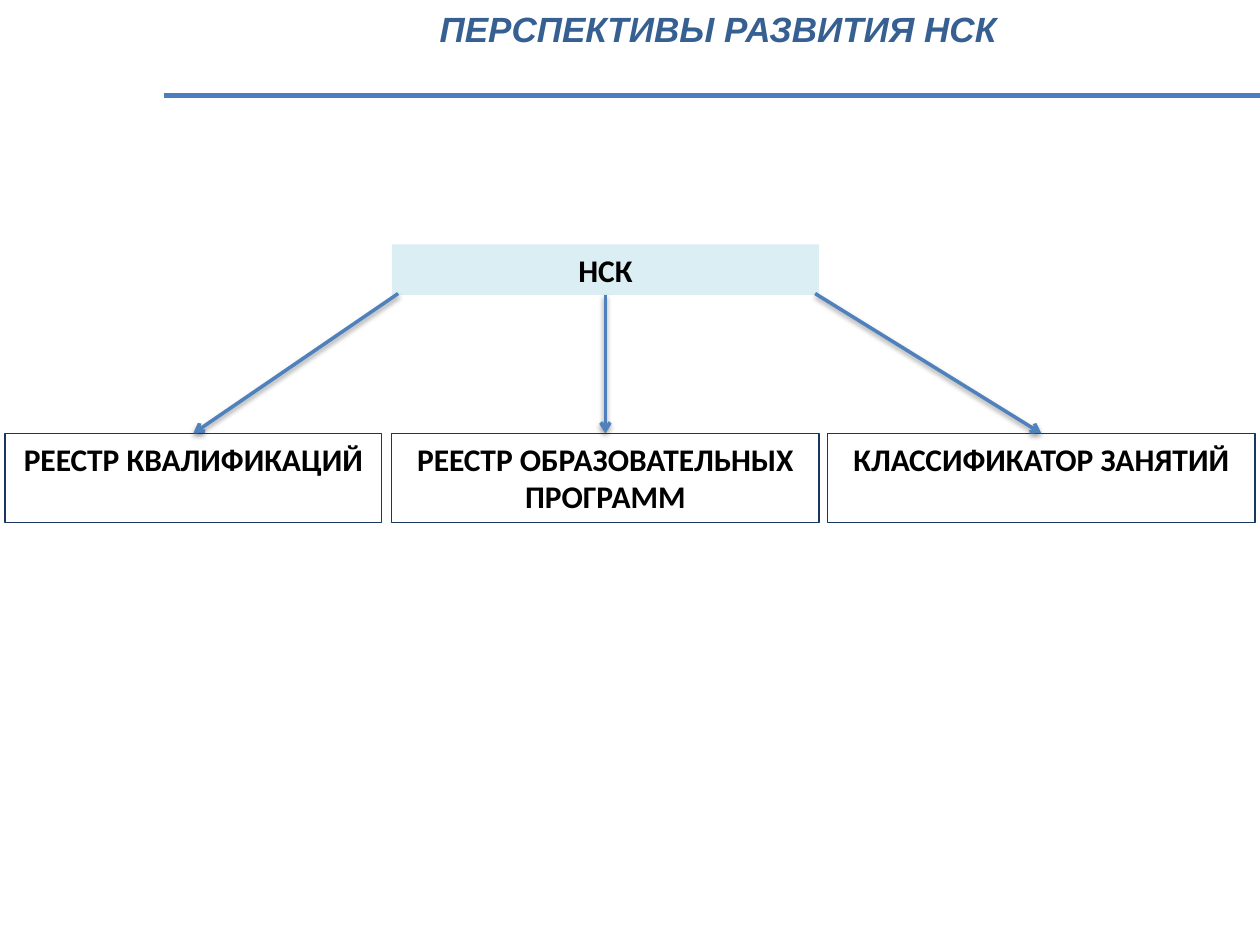
"""Build a slide showing the three parts of the НСК."""
from lxml import etree
from pptx import Presentation
from pptx.dml.color import RGBColor
from pptx.enum.shapes import MSO_CONNECTOR, MSO_SHAPE
from pptx.enum.text import MSO_ANCHOR, MSO_AUTO_SIZE, PP_ALIGN
from pptx.oxml.ns import qn
from pptx.util import Inches, Pt

STRAIGHT = MSO_CONNECTOR.STRAIGHT
RECTANGLE = MSO_SHAPE.RECTANGLE
TOP = MSO_ANCHOR.TOP
CENTER = PP_ALIGN.CENTER
NO_FIT = MSO_AUTO_SIZE.NONE

TITLE_BLUE = RGBColor(0x37, 0x60, 0x92)
RULE_BLUE = RGBColor(0x4B, 0x7E, 0xBC)
ARROW_BLUE = RGBColor(0x4F, 0x81, 0xBD)
BORDER_NAVY = RGBColor(0x17, 0x37, 0x5E)
PALE_BLUE = RGBColor(0xDB, 0xEE, 0xF4)
BLACK = RGBColor(0, 0, 0)

SITE_BOTTOM, SITE_TOP = 2, 0
BOX_TOP, BOX_HEIGHT = 3.44, 0.71
COMPONENTS = [
    ("РЕЕСТР КВАЛИФИКАЦИЙ", 0.04, 2.99),
    ("РЕЕСТР ОБРАЗОВАТЕЛЬНЫХ ПРОГРАММ", 3.11, 3.39),
    ("КЛАССИФИКАТОР ЗАНЯТИЙ", 6.57, 3.39),
]
ARROW_STARTS = [3.16, 4.8, 6.47]
ARROW_TOP = 2.33


def write_text(shape, text, font="Calibri", size=18, color=BLACK, italic=False):
    """Put one bold centred paragraph at the top of a shape."""
    frame = shape.text_frame
    frame.word_wrap = True
    frame.auto_size = NO_FIT
    frame.vertical_anchor = TOP
    para = frame.paragraphs[0]
    para.alignment = CENTER
    span = para.add_run()
    span.text = text
    span.font.name = font
    span.font.size = Pt(size)
    span.font.bold = True
    span.font.italic = italic
    span.font.color.rgb = color


def add_title(page, text):
    """Move the title placeholder to the top and fill it."""
    title = page.shapes.title
    title.left, title.top = Inches(1.14), Inches(0.01)
    title.width, title.height = Inches(8.62), Inches(0.44)
    title.text_frame.margin_left = Inches(0.6)
    write_text(title, text, font="Arial", size=20, color=TITLE_BLUE, italic=True)


def add_box(page, text, left, top, width, height, fill=None, border=None):
    """Add a labelled rectangle with an optional fill and border."""
    box = page.shapes.add_shape(
        RECTANGLE, Inches(left), Inches(top), Inches(width), Inches(height))
    box.shadow.inherit = False
    if fill is None:
        box.fill.background()
    else:
        box.fill.solid()
        box.fill.fore_color.rgb = fill
    if border is None:
        box.line.fill.background()
    else:
        box.line.color.rgb = border
        box.line.width = Pt(0.75)
    write_text(box, text)
    return box


def add_line(page, start, end, color, weight):
    """Add a straight connector and return it with its empty effect list."""
    line = page.shapes.add_connector(STRAIGHT, *map(Inches, start + end))
    line.line.color.rgb = color
    line.line.width = Pt(weight)
    effects = etree.SubElement(line._element.spPr, qn("a:effectLst"))
    return line, effects


def add_arrow(page, start, target):
    """Add a shadowed arrow from a point to the top of a box."""
    arrow, effects = add_line(page, start, start, ARROW_BLUE, 2)
    arrow.end_connect(target, SITE_TOP)
    etree.SubElement(arrow.line._get_or_add_ln(), qn("a:tailEnd"), type="arrow")
    shadow = etree.SubElement(
        effects, qn("a:outerShdw"), blurRad=str(Pt(3.1)), dist=str(Pt(1.6)),
        dir="5400000", rotWithShape="0")
    tint = etree.SubElement(shadow, qn("a:srgbClr"), val=str(BLACK))
    etree.SubElement(tint, qn("a:alpha"), val="38000")
    return arrow


def main():
    """Build and save the deck."""
    deck = Presentation()
    deck.slide_width, deck.slide_height = Inches(10), Inches(7.5)
    page = deck.slides.add_slide(deck.slide_layouts[5])
    add_title(page, "ПЕРСПЕКТИВЫ РАЗВИТИЯ НСК")
    add_line(page, (1.3, 0.76), (10.21, 0.76), RULE_BLUE, 2.75)

    root = add_box(page, "НСК", 3.11, 1.94, 3.39, 0.4, fill=PALE_BLUE)
    boxes = [
        add_box(page, text, left, BOX_TOP, width, BOX_HEIGHT, border=BORDER_NAVY)
        for text, left, width in COMPONENTS
    ]
    arrows = [
        add_arrow(page, (start, ARROW_TOP), box)
        for start, box in zip(ARROW_STARTS, boxes)
    ]
    arrows[1].begin_connect(root, SITE_BOTTOM)
    deck.save("out.pptx")


if __name__ == "__main__":
    main()
